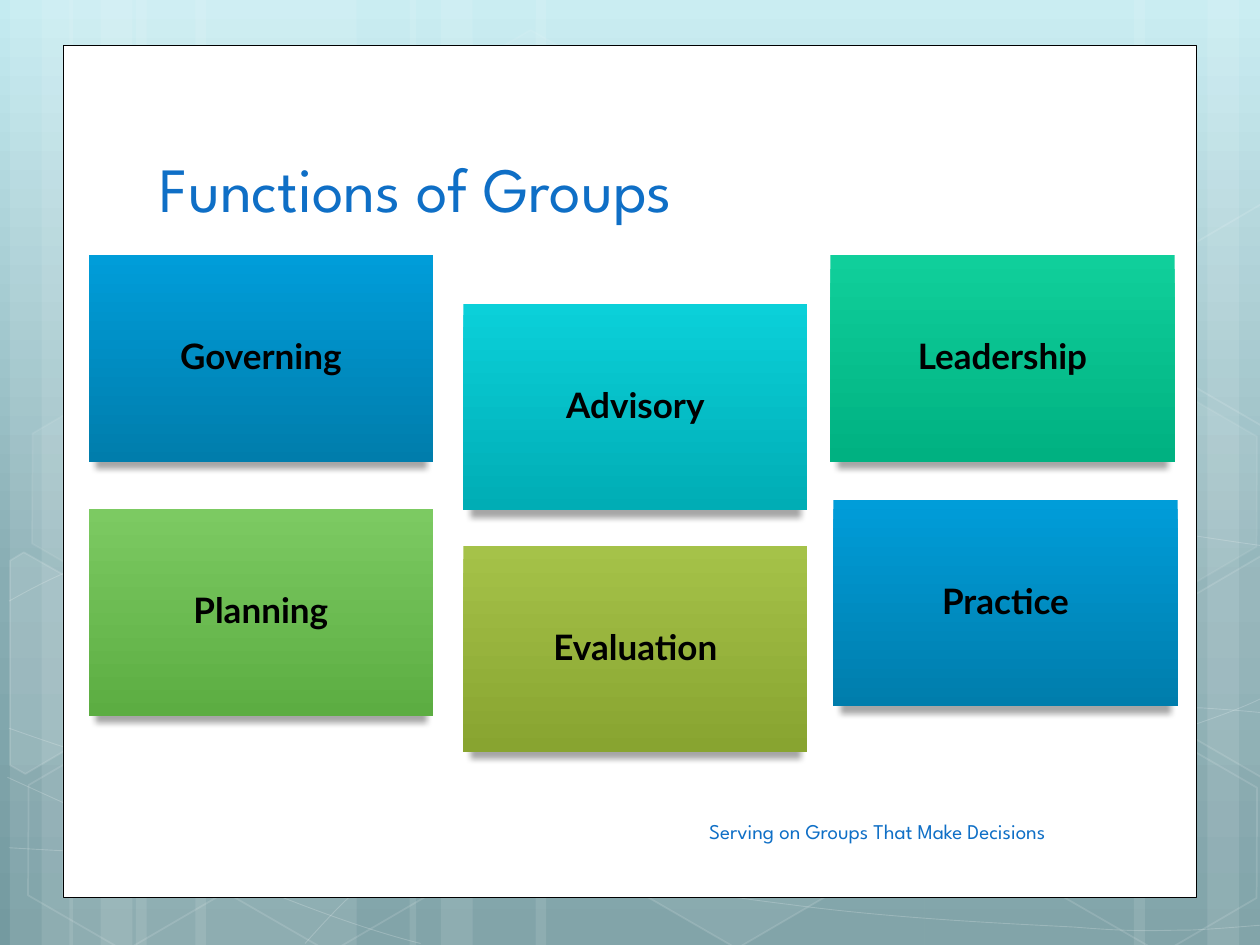
import pptx
import pptx.util
import pptx.dml.color
import pptx.enum.shapes
import pptx.enum.text
import pptx.oxml
import pptx.oxml.ns
import copy
import math

Cm, Pt = pptx.util.Cm, pptx.util.Pt
KIND = pptx.enum.shapes.MSO_SHAPE
MID = pptx.enum.text.MSO_ANCHOR.MIDDLE
LOW = pptx.enum.text.MSO_ANCHOR.BOTTOM
LEFT = pptx.enum.text.PP_ALIGN.LEFT
MEAN = pptx.enum.text.PP_ALIGN.CENTER
NS = pptx.oxml.ns.nsdecls("a")

HEAD = {"name": "League Spartan", "size": Pt(36)}
FOOT = {"name": "League Spartan", "size": Pt(12)}
CARD = {"name": "Lato", "size": Pt(20), "bold": True}
TILT = 30

# Stripes: left, width
STRIPES = [(2.74, 4.45), (0.2, 1.27), (0.84, 2.12),
           (3.94, 4.45), (1.4, 1.27), (2.03, 2.12),
           (18.63, 4.45), (24.34, 1.27), (22.86, 2.12),
           (10.8, 7.83), (8.26, 1.27), (8.89, 2.12)]

# Bezier curves: a start, then three points for each segment
CURVES = [
    [(0.18, 17.09), (1.55, 17.17), (2.92, 17.25), (4.83, 17.22),
     (6.73, 17.2), (9.09, 17.15), (11.63, 16.89),
     (14.17, 16.64), (17.78, 16.15), (20.12, 15.67),
     (22.43, 15.19), (24.82, 14.43), (25.58, 14)],
    [(0.18, 12.12), (0.91, 11.71), (1.65, 11.33), (3.07, 10.95),
     (4.52, 10.57), (6.58, 10.01), (8.81, 9.83),
     (11.07, 9.65), (13.82, 9.63), (16.61, 9.83),
     (19.41, 10.03), (24.05, 10.82), (25.58, 11.02)],
    [(0.15, 15.67), (3.23, 17.07), (6.27, 18.47), (8.48, 19.02)],
    [(0.18, 14.68), (0.97, 14.96), (1.78, 15.24), (3.25, 15.65),
     (4.72, 16.03), (6.93, 16.66), (9.07, 17.09),
     (11.18, 17.53), (13.84, 17.98), (15.95, 18.24),
     (18.06, 18.52), (20.32, 18.62), (21.67, 18.69),
     (22.99, 18.8), (23.34, 18.75), (24, 18.75),
     (24.66, 18.72), (25.12, 18.67), (25.58, 18.64)],
    [(6.15, 19.02), (6.6, 18.52), (7.06, 18.01), (7.67, 17.55),
     (8.28, 17.09), (9.14, 16.59), (9.86, 16.23),
     (10.57, 15.88), (11, 15.72), (11.94, 15.47),
     (12.85, 15.21), (14.55, 14.86), (15.44, 14.68),
     (16.36, 14.5), (16.48, 14.5), (17.27, 14.45),
     (18.06, 14.38), (19.3, 14.3), (20.17, 14.27),
     (21.06, 14.25), (22.5, 14.27), (22.5, 14.27),
     (23.07, 14.27), (23.64, 14.27), (24.21, 14.27),
     (24.66, 14.3), (25.1, 14.33), (25.55, 14.38)],
]

# Hexagons: left, top, fill opacity, line opacity
HEXES = [(8.48, 0.91, 4, 8), (12.62, 14.96, 6, 12), (0.28, 15.01, 0, 12),
         (0.36, 7.92, 7, 8), (4.42, 15.04, 0, 12), (21.18, 15.06, 0, 12),
         (21.18, 7.98, 7, 8)]

# Hexagons cut by the slide edge: points, turning centre, fill opacity
WEST = [(0.2, 11.3), (0.48, 11.13), (2.44, 12.24), (2.41, 14.48),
        (0.51, 15.6), (0.2, 15.42)]
EAST = [(23.52, 12.32), (25.43, 11.2), (25.63, 11.33), (25.63, 15.57),
        (25.45, 15.67), (23.52, 14.55)]
CUTS = [(WEST, (0.91, 13.59), 10), (EAST, (25.02, 13.21), 4),
        ([(x, y - 7.09) for x, y in EAST], (25.02, 6.12), 0)]

# Cards: text, left and top in the panel, gradient ends
CARDS = [("Governing", 0.52, 4.24, "009DD9", "007DAC"),
         ("Advisory", 8.07, 5.22, "0BD0D9", "00ADB5"),
         ("Leadership", 15.47, 4.24, "10CF9B", "00B181"),
         ("Planning", 0.52, 9.36, "7CCA62", "5CAD42"),
         ("Evaluation", 8.07, 10.09, "A5C249", "88A430"),
         ("Practice", 15.53, 9.17, "009DD9", "007DAC")]


def tint(text):
    return pptx.dml.color.RGBColor.from_string(text)


def blend(fill, stops):
    """Fill from top to bottom with (place, colour) stops."""
    fill.gradient()
    fill.gradient_angle = 270
    for stop, (place, hue) in zip(fill.gradient_stops, stops):
        stop.position = place
        stop.color.rgb = tint(hue)


def style(shape, fill=0, line=0, width=1):
    """Give white fill and line of the given opacity in percent."""
    shape.shadow.inherit = False
    parts = [(shape.fill, fill, "a:solidFill"),
             (shape.line.fill, line, "a:ln/a:solidFill")]
    for paint, alpha, tag in parts:
        if not alpha:
            paint.background()
            continue
        paint.solid()
        paint.fore_color.rgb = tint("FFFFFF")
        if alpha < 100:
            hue = shape.element.spPr.xpath(tag + "/a:srgbClr")[0]
            hue.append(pptx.oxml.parse_xml(f'<a:alpha {NS} val="{alpha * 1000}"/>'))
    if line:
        shape.line.width = Pt(width)


def place(slide, kind, x, y, w, h):
    return slide.shapes.add_shape(kind, Cm(x), Cm(y), Cm(w), Cm(h))


def trace(slide, box, points, close):
    points = [(Cm(box[0] + x), Cm(box[1] + y)) for x, y in points]
    pen = slide.shapes.build_freeform(*points[0], scale=1)
    pen.add_line_segments(points[1:], close=close)
    return pen.convert_to_shape()


def bend(shape):
    """Turn each three line steps of an outline into one cubic curve."""
    steps = shape.element.spPr.xpath(".//a:lnTo")
    for i in range(0, len(steps), 3):
        curve = pptx.oxml.parse_xml(f"<a:cubicBezTo {NS}/>")
        steps[i].addprevious(curve)
        for step in steps[i:i + 3]:
            curve.append(step[0])
            step.getparent().remove(step)
    return shape


def turn(points, mid, angle):
    """Rotate points clockwise about a centre."""
    c, s = math.cos(math.radians(angle)), math.sin(math.radians(angle))
    near = [(x - mid[0], y - mid[1]) for x, y in points]
    return [(mid[0] + x * c - y * s, mid[1] + x * s + y * c) for x, y in near]


def write(shape, text, look, hue, align, anchor):
    frame = shape.text_frame
    frame.word_wrap = True
    frame.vertical_anchor = anchor
    para = frame.paragraphs[0]
    para.text = text
    para.alignment = align
    for key, value in look.items():
        setattr(para.font, key, value)
    para.font.color.rgb = tint(hue)
    return para


def label(slide, x, y, w, h, *words):
    write(slide.shapes.add_textbox(Cm(x), Cm(y), Cm(w), Cm(h)), *words)


def scene(slide, box):
    """Gradient backdrop with stripes, curves and hexagons."""
    x, y, w, h = box
    fill = slide.background.fill
    fill.gradient()
    stops = slide.element.xpath(".//a:gsLst")[0]
    stops.append(copy.deepcopy(stops[-1]))
    blend(fill, [(0, "C4EBF1"), (0.62, "88ADB3"), (1, "749AA0")])
    for left, wide in STRIPES:
        style(place(slide, KIND.RECTANGLE, x + left, y, wide, h), fill=10)
    for nodes in CURVES:
        style(bend(trace(slide, box, nodes, False)), line=20, width=0.5)
    for left, top, fill, line in HEXES:
        hexa = place(slide, KIND.HEXAGON, x + left, y + top, 4.45, 3.86)
        hexa.adjustments[0] = 0.285
        hexa.rotation = TILT
        style(hexa, fill, line)
    for points, mid, fill in CUTS:
        part = trace(slide, box, turn(points, mid, -TILT), True)
        part.rotation = TILT
        style(part, fill, 12)


def card(slide, box, text, top, end):
    """Gradient tile with a soft shadow and a bold word."""
    tile = place(slide, KIND.RECTANGLE, *box)
    style(tile)
    blend(tile.fill, [(0, top), (1, end)])
    tile.element.spPr.xpath("a:effectLst")[0].append(pptx.oxml.parse_xml(
        f'<a:outerShdw {NS} blurRad="{Pt(3.5)}" dist="{Pt(4)}" dir="5400000" '
        'sx="96000" rotWithShape="0"><a:srgbClr val="000000">'
        '<a:alpha val="34000"/></a:srgbClr></a:outerShdw>'))
    para = write(tile, text, CARD, "000000", MEAN, MID)
    para.line_spacing = 0.9
    for side in ("left", "top", "right", "bottom"):
        setattr(tile.text_frame, "margin_" + side, Cm(0.2))


def panel(slide, box):
    """White sheet with title, cards and footer."""
    x, y, w, h = box
    sheet = place(slide, KIND.RECTANGLE, *box)
    style(sheet, 100, 100, 0.5)
    sheet.line.color.rgb = tint("000000")
    label(slide, x + 1.7, y + 0.58, 19.51, 3.18,
          "Functions of Groups", HEAD, "0F6FC6", LEFT, LOW)
    label(slide, x + 11.49, y + 15.33, 9.86, 1.02,
          "Serving on Groups That Make Decisions", FOOT, "0F6FC6", MEAN, MID)
    for text, left, top, *hues in CARDS:
        card(slide, (x + left, y + top, 6.94, 4.16), text, *hues)


def main():
    deck = pptx.Presentation()
    deck.slide_width, deck.slide_height = Cm(25.4), Cm(19.05)
    slide = deck.slides.add_slide(deck.slide_layouts[6])
    scene(slide, (0, 0, 25.4, 19.05))
    panel(slide, (1.27, 0.91, 22.86, 17.19))
    deck.save("out.pptx")


if __name__ == "__main__":
    main()
